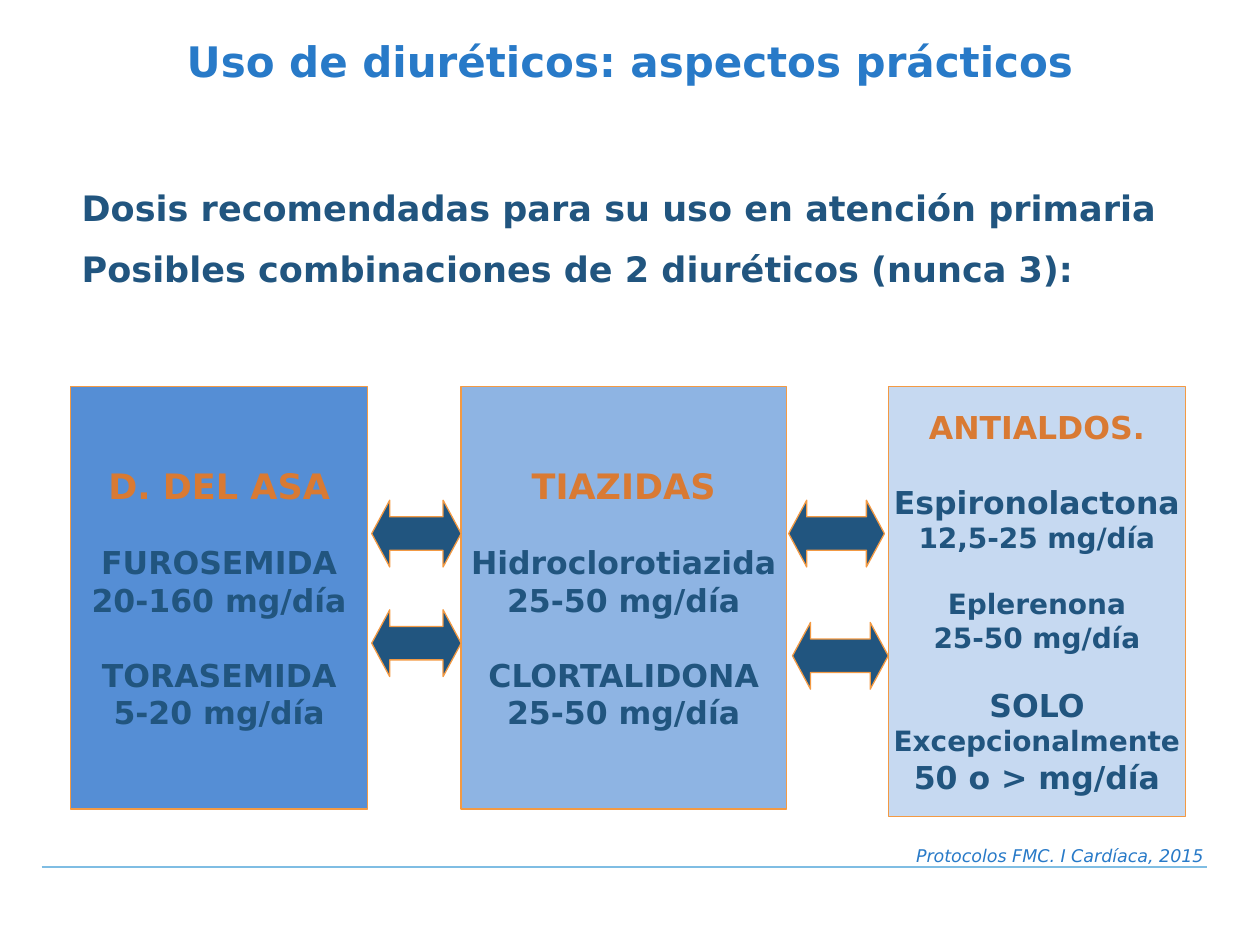
from dataclasses import dataclass

import pptx
import pptx.dml.color
import pptx.enum.shapes
import pptx.enum.text
import pptx.oxml.ns
import pptx.util
from lxml import etree

Inches = pptx.util.Inches
Pt = pptx.util.Pt
RGBColor = pptx.dml.color.RGBColor
Align = pptx.enum.text.PP_ALIGN
Anchor = pptx.enum.text.MSO_ANCHOR
ShapeType = pptx.enum.shapes.MSO_SHAPE

FONT = "DejaVu Sans"
LINE_HEIGHT = 1.164  # DejaVu Sans line height, as a multiple of its size
TITLE_BLUE = RGBColor(0x28, 0x7A, 0xC8)
DARK_BLUE = RGBColor(0x21, 0x55, 0x7F)
ORANGE = RGBColor(0xD9, 0x7A, 0x33)
OUTLINE = RGBColor(0xF3, 0x9A, 0x44)
RULE_BLUE = RGBColor(0x7F, 0xBD, 0xE3)
STRONG_BLUE = RGBColor(0x55, 0x8E, 0xD5)
MEDIUM_BLUE = RGBColor(0x8E, 0xB4, 0xE3)
PALE_BLUE = RGBColor(0xC6, 0xD9, 0xF1)

CARD_TOP = 3.07
ARROW_HEIGHT = 0.53


@dataclass
class Line:
    text: str
    size: float = 18
    color: RGBColor = DARK_BLUE
    before: float = 0
    bold: bool = True
    italic: bool = False


@dataclass
class Card:
    left: float
    width: float
    height: float
    fill: RGBColor
    lines: list[Line]


@dataclass
class ArrowPair:
    width: float
    positions: list[tuple[float, float]]


def drug(name: str, dose: str, name_size: float = 18, dose_size: float = 18,
         gap_size: float = 18) -> list[Line]:
    """A drug and its dose, set one line of gap_size below what precedes."""
    return [Line(name, name_size, before=gap_size * LINE_HEIGHT), Line(dose, dose_size)]


CARDS = [
    Card(0.56, 2.36, 3.35, STRONG_BLUE, [
        Line("D. DEL ASA", 20, ORANGE),
        *drug("FUROSEMIDA", "20-160 mg/día"),
        *drug("TORASEMIDA", "5-20 mg/día"),
    ]),
    Card(3.66, 2.58, 3.35, MEDIUM_BLUE, [
        Line("TIAZIDAS", 20, ORANGE),
        *drug("Hidroclorotiazida", "25-50 mg/día"),
        *drug("CLORTALIDONA", "25-50 mg/día"),
    ]),
    Card(7.05, 2.36, 3.41, PALE_BLUE, [
        Line("ANTIALDOS.", 18, ORANGE),
        *drug("Espironolactona", "12,5-25 mg/día", dose_size=16),
        *drug("Eplerenona", "25-50 mg/día", 16, 16, 16),
        *drug("SOLO", "Excepcionalmente", 18, 16, 16),
        Line("50 o > mg/día"),
    ]),
]

ARROW_PAIRS = [
    ArrowPair(0.71, [(2.95, 3.97), (2.95, 4.84)]),
    ArrowPair(0.76, [(6.26, 3.97), (6.29, 4.94)]),
]


def write_lines(frame, lines: list[Line], align: Align) -> None:
    for index, line in enumerate(lines):
        paragraph = frame.paragraphs[0] if index == 0 else frame.add_paragraph()
        paragraph.text = line.text
        paragraph.alignment = align
        paragraph.space_before = Pt(round(line.before, 1))
        font_format = {"name": FONT, "size": Pt(line.size),
                       "bold": line.bold, "italic": line.italic}
        for name, value in font_format.items():
            setattr(paragraph.font, name, value)
        paragraph.font.color.rgb = line.color


def add_text(slide, left: float, top: float, width: float, height: float,
             lines: list[Line], align: Align) -> None:
    box = slide.shapes.add_textbox(Inches(left), Inches(top), Inches(width), Inches(height))
    box.text_frame.word_wrap = True
    write_lines(box.text_frame, lines, align)


def style_shape(shape, fill: RGBColor) -> None:
    shape.shadow.inherit = False
    shape.fill.solid()
    shape.fill.fore_color.rgb = fill
    shape.line.color.rgb = OUTLINE
    shape.line.width = Pt(0.75)


def add_card(slide, card: Card) -> None:
    shape = slide.shapes.add_shape(ShapeType.RECTANGLE, Inches(card.left), Inches(CARD_TOP),
                                   Inches(card.width), Inches(card.height))
    style_shape(shape, card.fill)
    shape.text_frame.word_wrap = False
    shape.text_frame.vertical_anchor = Anchor.MIDDLE
    write_lines(shape.text_frame, card.lines, Align.CENTER)


def add_arrow_pair(slide, pair: ArrowPair) -> None:
    group = slide.shapes.add_group_shape()
    for left, top in pair.positions:
        arrow = group.shapes.add_shape(ShapeType.LEFT_RIGHT_ARROW, Inches(left), Inches(top),
                                       Inches(pair.width), Inches(ARROW_HEIGHT))
        arrow.adjustments[0] = 0.5
        arrow.adjustments[1] = 0.27
        style_shape(arrow, DARK_BLUE)


def add_footer_rule(slide) -> None:
    rule = slide.shapes.add_connector(pptx.enum.shapes.MSO_CONNECTOR.STRAIGHT,
                                      Inches(0.33), Inches(6.88), Inches(9.58), Inches(6.88))
    rule.line.color.rgb = RULE_BLUE
    rule.line.width = Pt(0.75)
    etree.SubElement(rule._element.spPr, pptx.oxml.ns.qn("a:effectLst"))


def set_title(slide, line: Line) -> None:
    title = slide.shapes.title
    place = {"left": 0, "top": 0.16, "width": 10, "height": 0.65}
    for name, value in place.items():
        setattr(title, name, Inches(value))
    title.text_frame.vertical_anchor = Anchor.MIDDLE
    write_lines(title.text_frame, [line], Align.CENTER)


def main() -> None:
    presentation = pptx.Presentation()
    presentation.slide_width = Inches(10)
    presentation.slide_height = Inches(7.5)
    slide = presentation.slides.add_slide(presentation.slide_layouts[5])

    set_title(slide, Line("Uso de diuréticos: aspectos prácticos", 24, TITLE_BLUE))
    add_footer_rule(slide)
    add_text(slide, 0.55, 1.43, 8.87, 0.94, [
        Line("Dosis recomendadas para su uso en atención primaria", 20),
        Line("Posibles combinaciones de 2 diuréticos (nunca 3):", 20, before=11),
    ], Align.LEFT)
    for card in CARDS:
        add_card(slide, card)
    for pair in ARROW_PAIRS:
        add_arrow_pair(slide, pair)
    add_text(slide, 0.67, 6.66, 8.98, 0.27, [
        Line("Protocolos FMC. I Cardíaca, 2015", 10, TITLE_BLUE, bold=False, italic=True),
    ], Align.RIGHT)

    presentation.save("out.pptx")


if __name__ == "__main__":
    main()
